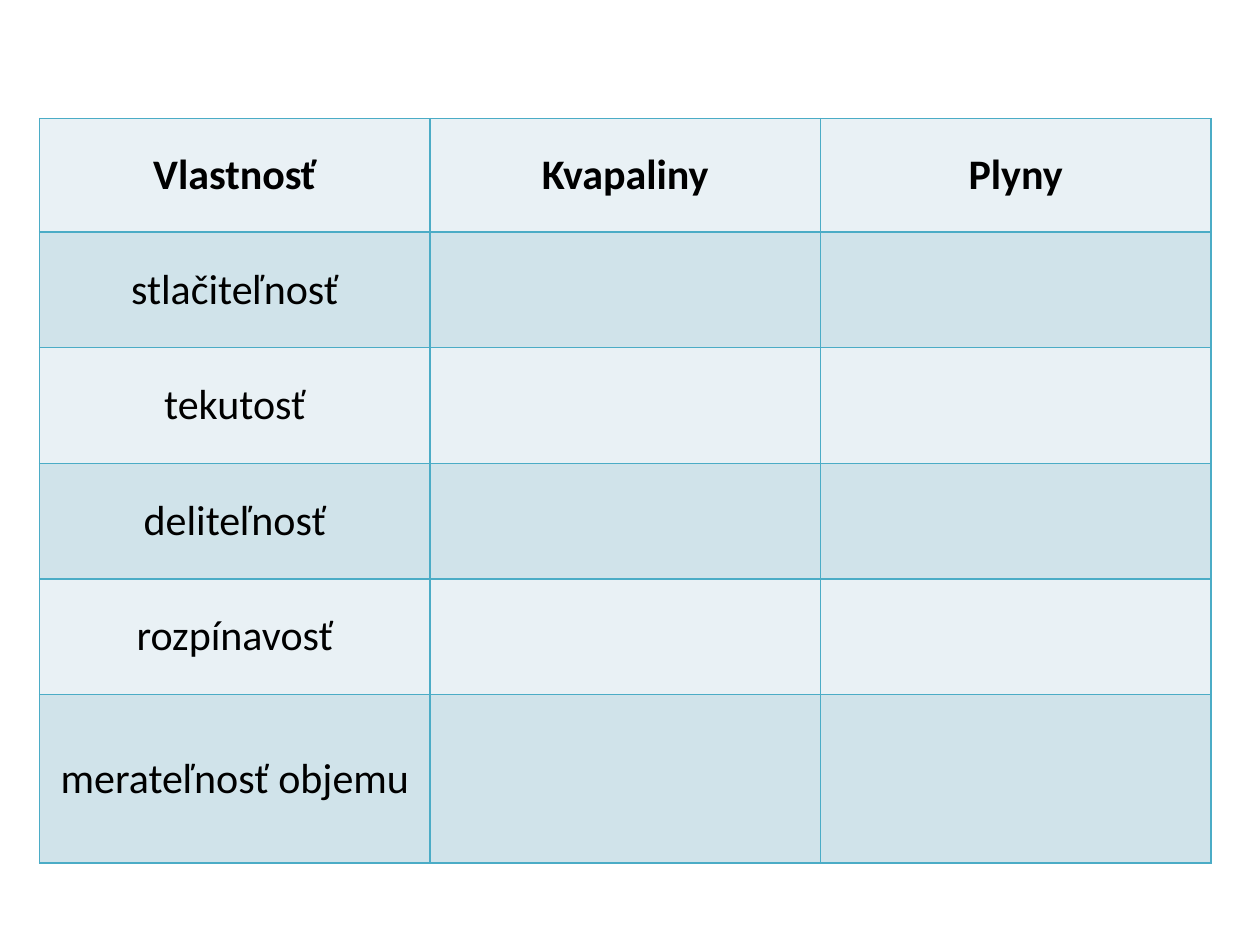
from dataclasses import dataclass

from lxml.etree import SubElement
from pptx import Presentation
from pptx.dml.color import RGBColor
from pptx.enum.text import MSO_ANCHOR as Anchor, PP_ALIGN as Align
from pptx.oxml.ns import qn
from pptx.util import Cm, Pt

PALE, DEEP, EDGE, INK = "E9F1F5", "D0E3EA", "4BACC6", "000000"


@dataclass
class Row:
    texts: tuple[str, ...]
    height: float
    bold: bool = False


ROWS = [
    Row(("Vlastnosť", "Kvapaliny", "Plyny"), 2.29, bold=True),
    Row(("stlačiteľnosť", "", ""), 2.33),
    Row(("tekutosť", "", ""), 2.33),
    Row(("deliteľnosť", "", ""), 2.33),
    Row(("rozpínavosť", "", ""), 2.33),
    Row(("merateľnosť objemu", "", ""), 3.4),
]
COL = 7.87


def color(code: str) -> RGBColor:
    return RGBColor.from_string(code)


def add_edges(cell) -> None:
    """Draw a thin line on all four sides; call before filling the cell."""
    props = cell._tc.get_or_add_tcPr()
    for side in ("lnL", "lnR", "lnT", "lnB"):
        line = SubElement(props, qn(f"a:{side}"), w=str(Pt(1)))
        fill = SubElement(line, qn("a:solidFill"))
        SubElement(fill, qn("a:srgbClr"), val=EDGE)


def fill_cell(cell, text: str, shade: str, bold: bool) -> None:
    add_edges(cell)
    cell.fill.solid()
    cell.fill.fore_color.rgb = color(shade)
    cell.vertical_anchor = Anchor.MIDDLE
    par = cell.text_frame.paragraphs[0]
    par.text = text
    par.alignment = Align.CENTER
    font = par.font
    for font in [run.font for run in par.runs] or [par.font]:
        font.name = "Calibri"
        font.size = Pt(24)
        font.bold = bold
        font.color.rgb = color(INK)


def add_grid(slide, rows: list[Row]) -> None:
    count = len(rows[0].texts)
    high = sum(row.height for row in rows)
    table = slide.shapes.add_table(
        len(rows), count, Cm(0.8), Cm(2.39), Cm(COL * count), Cm(high)
    ).table
    for col in table.columns:
        col.width = Cm(COL)
    for i, row in enumerate(rows):
        table.rows[i].height = Cm(row.height)
        shade = DEEP if i % 2 else PALE
        for j, text in enumerate(row.texts):
            fill_cell(table.cell(i, j), text, shade, row.bold)


def main() -> None:
    deck = Presentation()
    deck.slide_width, deck.slide_height = Cm(25.4), Cm(19.05)
    slide = deck.slides.add_slide(deck.slide_layouts[6])
    add_grid(slide, ROWS)
    deck.save("out.pptx")


if __name__ == "__main__":
    main()
